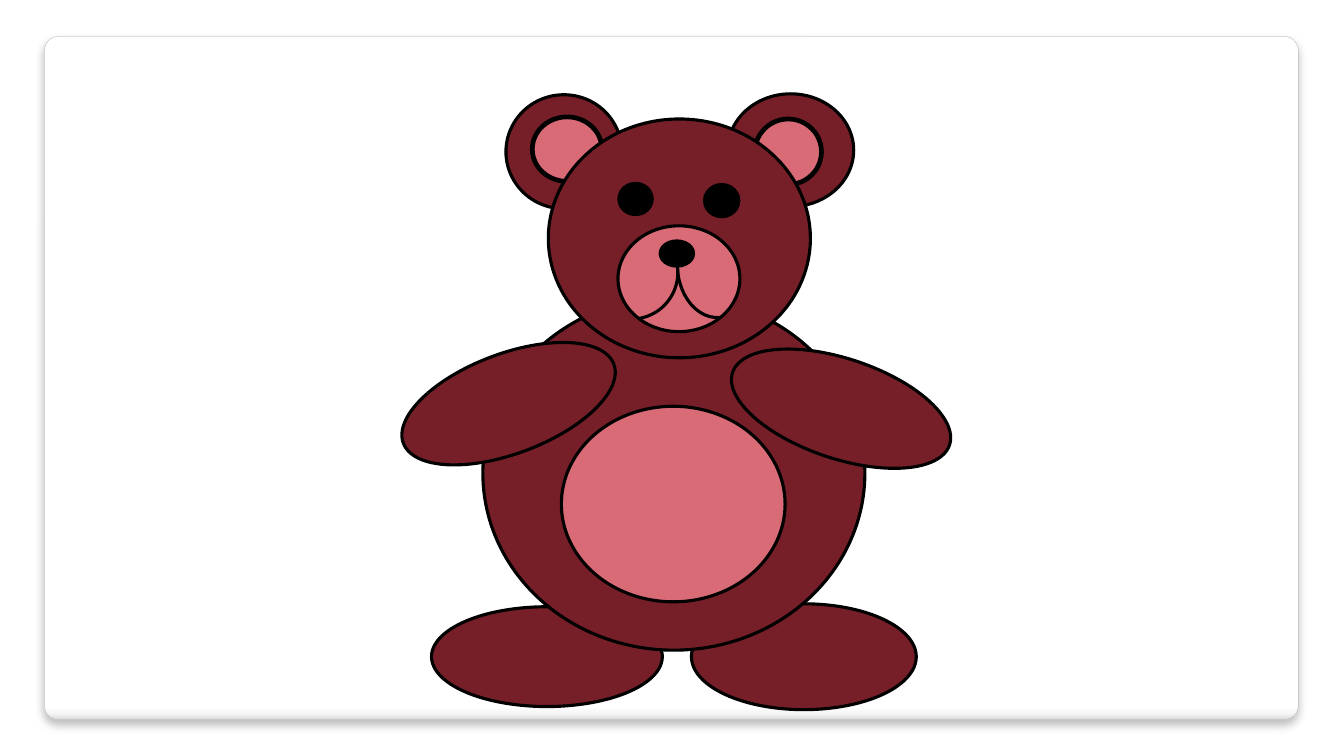
import pptx
import pptx.util
import pptx.dml.color
import pptx.enum.shapes
import pptx.oxml
import pptx.oxml.ns

Pt = pptx.util.Pt
KIND = pptx.enum.shapes.MSO_SHAPE
FUR, PINK, BLACK = "771F28", "D96B77", "000000"

STOPS = [(0, "FFFFFF"), (98, "FFFFFF"), (99, "F7F7F7"), (100, "DADADA")]

EARS = [
    ((361.4, 67.7, 82.8, 81.4), (380.2, 83.5, 49.7, 46.1)),
    ((519.8, 67, 90, 80.6), (539.3, 85, 47.5, 46.8)),
]
FEET = [(493.9, 431.3, 160.6, 75.6), (308.2, 433.4, 164.9, 71.3)]
BODY = (344.9, 211.7, 272.9, 252.7)
HEAD = (391.7, 85, 187.2, 170.6)
ARMS = [((283, 252.7, 160.6, 71.3), 339.4), ((519.1, 256.3, 163.4, 71.3), 18.5)]
MUZZLE = (441.4, 161.3, 87.1, 75.6)
NOSE = (471.6, 172.1, 23.8, 18)
BELLY = (401, 290.2, 159.8, 139.7)
EYES = [(442.1, 131, 23.8, 22.3), (503.3, 131.8, 24.5, 23)]
MOUTH = [((483.8, 154.8, 52.6, 72), 174.3), ((417.6, 161.3, 67, 66.2), 80.7)]


def color(code):
    return pptx.dml.color.RGBColor.from_string(code)


def add_shape(slide, kind, box, line=BLACK, width=2.25, turn=0):
    shape = slide.shapes.add_shape(kind, *map(Pt, box))
    shape.shadow.inherit = False
    shape.rotation = turn
    shape.line.color.rgb = color(line)
    shape.line.width = Pt(width)
    return shape


def add_oval(slide, box, fill, width=2.25, turn=0):
    oval = add_shape(slide, KIND.OVAL, box, width=width, turn=turn)
    oval.fill.solid()
    oval.fill.fore_color.rgb = color(fill)


def add_arc(slide, box, turn):
    arc = add_shape(slide, KIND.ARC, box, turn=turn)
    arc.fill.background()


def add_xml(node, text):
    space = pptx.oxml.ns.nsdecls("a")
    node.append(pptx.oxml.parse_xml(text.replace(" ", f" {space} ", 1)))


def add_panel(slide):
    box = (31.7, 25.9, 895.7, 488.2)
    panel = add_shape(slide, KIND.ROUNDED_RECTANGLE, box, "A4A4A4", 0.16)
    panel.adjustments[0] = 0.021
    panel.fill.gradient()
    panel.fill.gradient_angle = 270
    props = panel._element.spPr
    stops = props.find(".//" + pptx.oxml.ns.qn("a:gsLst"))
    for stop in list(stops):
        stops.remove(stop)
    for place, code in STOPS:
        add_xml(stops, f'<a:gs pos="{place * 1000}"><a:srgbClr val="{code}"/></a:gs>')
    add_xml(
        props.find(pptx.oxml.ns.qn("a:effectLst")),
        f'<a:outerShdw blurRad="{Pt(6)}" dist="{Pt(4)}" dir="5400000" rotWithShape="0">'
        f'<a:srgbClr val="{BLACK}"><a:alpha val="25000"/></a:srgbClr></a:outerShdw>',
    )


def add_bear(slide):
    for outer, inner in EARS:
        add_oval(slide, outer, FUR)
        add_oval(slide, inner, PINK, 3.35)
    for box in FEET + [BODY, HEAD]:
        add_oval(slide, box, FUR)
    for box, turn in ARMS:
        add_oval(slide, box, FUR, turn=turn)
    for box in (MUZZLE, BELLY):
        add_oval(slide, box, PINK)
    for box in EYES + [NOSE]:
        add_oval(slide, box, BLACK)
    for box, turn in MOUTH:
        add_arc(slide, box, turn)


def main():
    deck = pptx.Presentation()
    deck.slide_width, deck.slide_height = Pt(960), Pt(540)
    slide = deck.slides.add_slide(deck.slide_layouts[6])
    add_panel(slide)
    add_bear(slide)
    deck.save("out.pptx")


if __name__ == "__main__":
    main()
